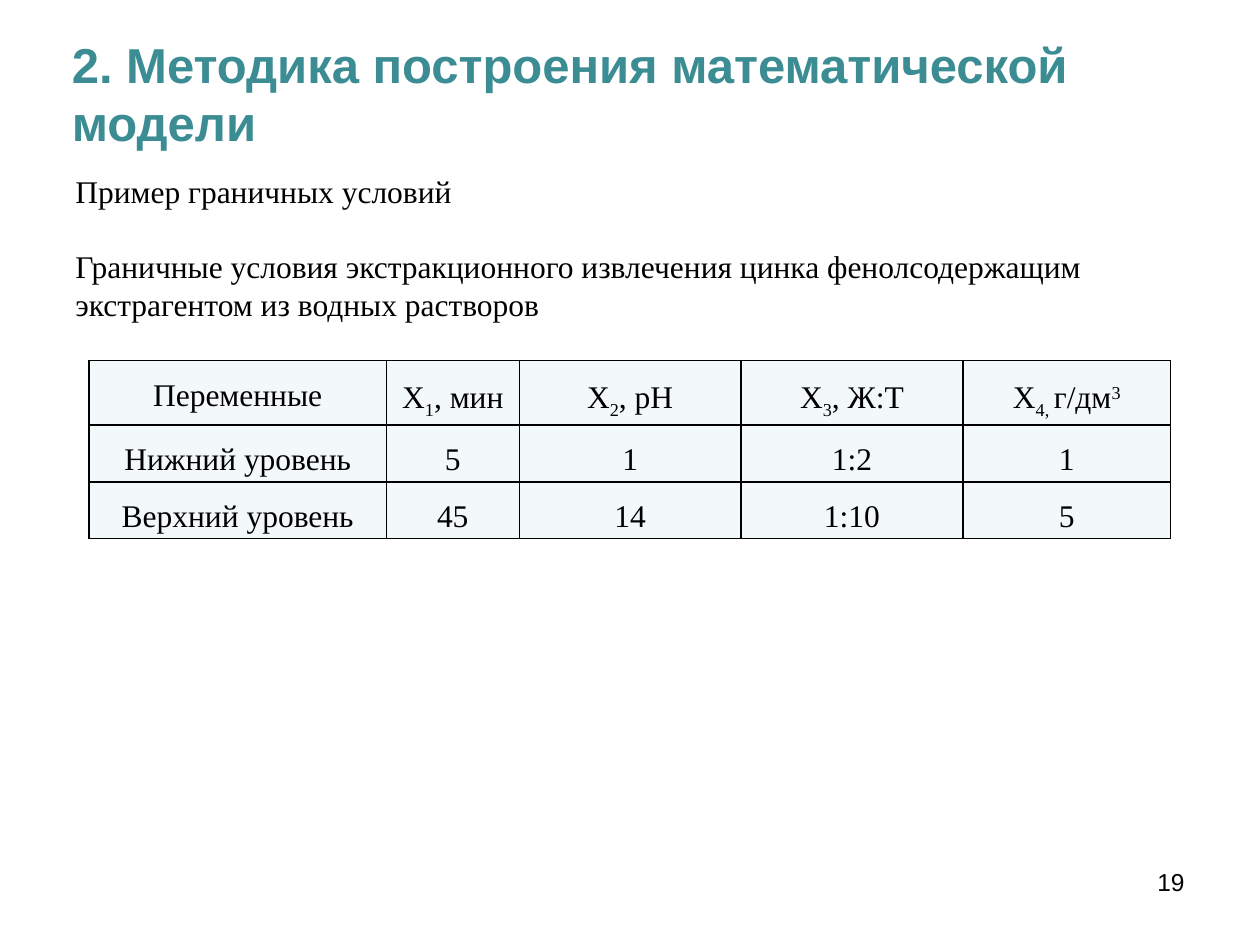
from dataclasses import dataclass

from lxml.etree import SubElement
from pptx import Presentation
from pptx.dml.color import RGBColor
from pptx.enum.text import PP_ALIGN as Align
from pptx.oxml.ns import qn
from pptx.util import Pt

SERIF, SANS = "Times New Roman", "Arial"
BLACK, TEAL, PALE = "000000", "3C8C93", "F3F9FA"


@dataclass(frozen=True)
class Style:
    font: str
    size: float
    color: str = BLACK
    bold: bool = False


@dataclass(frozen=True)
class TextBlock:
    left: float
    top: float
    width: float
    height: float
    lines: tuple[str, ...]
    style: Style
    para_format: dict


TITLE = Style(SANS, 28, TEAL, True)
BODY = Style(SERIF, 18)
NUMBER = Style(SANS, 14)

BLOCKS = (
    TextBlock(516, 492, 168, 37.5, ("19",), NUMBER, {"alignment": Align.RIGHT}),
    TextBlock(34, 16, 652, 75, ("2. Методика построения математической модели",), TITLE, {}),
    TextBlock(36, 95, 669, 117,
              ("Пример граничных условий",
               "Граничные условия экстракционного извлечения цинка фенолсодержащим "
               "экстрагентом из водных растворов"),
              BODY, {"space_after": Pt(21)}),
)

# Each cell is a list of (text, baseline shift in percent).
HEADER = (
    [("Переменные", 0)],
    [("Х", 0), ("1", -25), (", мин", 0)],
    [("Х", 0), ("2", -25), (", рН", 0)],
    [("Х", 0), ("3", -25), (", Ж:Т", 0)],
    [("Х", 0), ("4, ", -25), ("г/дм", 0), ("3", 30)],
)
LEVELS = (
    ("Нижний уровень", "5", "1", "1:2", "1"),
    ("Верхний уровень", "45", "14", "1:10", "5"),
)
COLUMN_WIDTHS = (169.75, 76, 126.75, 126.75, 118.75)
ROW_HEIGHTS = (37, 32.3, 32.3)


def rgb(code: str) -> RGBColor:
    return RGBColor.from_string(code)


def set_all(target, values: dict) -> None:
    for name, value in values.items():
        setattr(target, name, value)


def add_span(para, text: str, style: Style, baseline: int = 0) -> None:
    span = para.add_run()
    span.text = text
    set_all(span.font, {"name": style.font, "size": Pt(style.size), "bold": style.bold})
    span.font.color.rgb = rgb(style.color)
    if baseline:
        span.font._element.set("baseline", str(baseline * 1000))


def add_text(page, block: TextBlock) -> None:
    box = page.shapes.add_textbox(Pt(block.left), Pt(block.top), Pt(block.width), Pt(block.height))
    frame = box.text_frame
    frame.word_wrap = True
    for index, line in enumerate(block.lines):
        para = frame.add_paragraph() if index else frame.paragraphs[0]
        set_all(para, block.para_format)
        add_span(para, line, block.style)


def add_borders(cell) -> None:
    """Draw a thin black line on every side; borders must precede the fill."""
    properties = cell._tc.get_or_add_tcPr()
    for side in ("lnL", "lnR", "lnT", "lnB"):
        line = SubElement(properties, qn(f"a:{side}"), w=str(Pt(1)))
        fill = SubElement(line, qn("a:solidFill"))
        SubElement(fill, qn("a:srgbClr"), val=BLACK)


def fill_cell(cell, spans: list[tuple[str, int]]) -> None:
    add_borders(cell)
    cell.fill.solid()
    cell.fill.fore_color.rgb = rgb(PALE)
    set_all(cell, {"margin_left": Pt(5), "margin_right": Pt(5), "margin_top": 0, "margin_bottom": 0})
    para = cell.text_frame.paragraphs[0]
    set_all(para, {"alignment": Align.CENTER, "line_spacing": 1.5})
    for text, baseline in spans:
        add_span(para, text, BODY, baseline)


def add_conditions_table(page) -> None:
    rows = [HEADER] + [[[(text, 0)] for text in level] for level in LEVELS]
    table = page.shapes.add_table(len(rows), len(COLUMN_WIDTHS), Pt(51), Pt(206),
                                  Pt(sum(COLUMN_WIDTHS)), Pt(sum(ROW_HEIGHTS))).table
    for column, width in zip(table.columns, COLUMN_WIDTHS):
        column.width = Pt(width)
    for row, height, contents in zip(table.rows, ROW_HEIGHTS, rows):
        row.height = Pt(height)
        for cell, spans in zip(row.cells, contents):
            fill_cell(cell, spans)


def main() -> None:
    deck = Presentation()
    set_all(deck, {"slide_width": Pt(720), "slide_height": Pt(540)})
    page = deck.slides.add_slide(deck.slide_layouts[6])
    for block in BLOCKS:
        add_text(page, block)
    add_conditions_table(page)
    deck.save("out.pptx")


if __name__ == "__main__":
    main()
